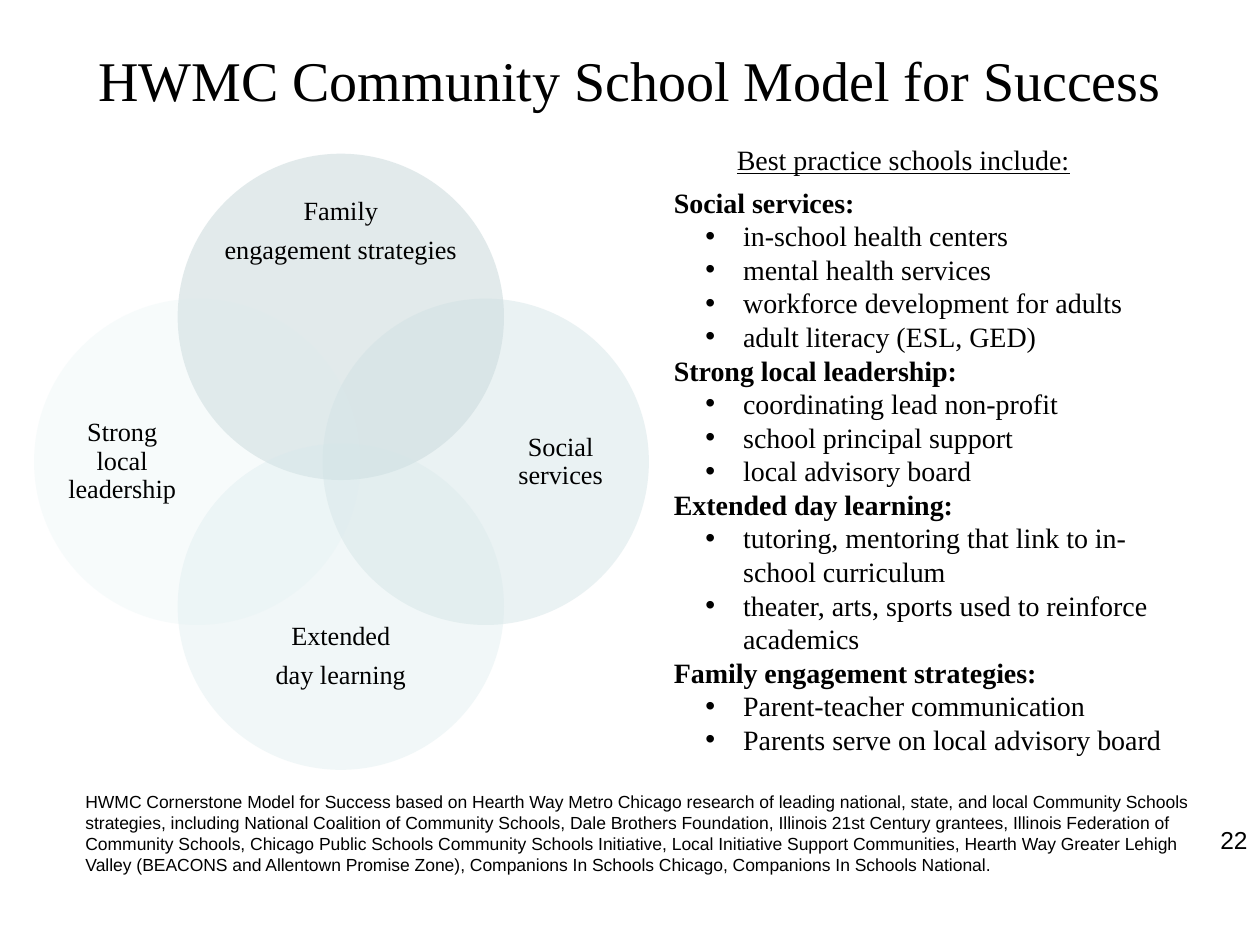
from lxml import etree
from pptx import Presentation
from pptx.dml.color import RGBColor
from pptx.enum.shapes import MSO_SHAPE
from pptx.enum.text import MSO_ANCHOR, PP_ALIGN
from pptx.oxml.ns import qn
from pptx.util import Inches, Pt

OVAL = MSO_SHAPE.OVAL
TOP, MIDDLE = MSO_ANCHOR.TOP, MSO_ANCHOR.MIDDLE
LEFT, CENTER, RIGHT = PP_ALIGN.LEFT, PP_ALIGN.CENTER, PP_ALIGN.RIGHT

COLORS = {
    "text": "000000",
    "family": "C6D7D9",
    "services": "CCDFE1",
    "learning": "D3E7E9",
    "leadership": "DBEDEF",
}
SERIF, SANS = "Times New Roman", "Arial"
DIAMETER = 2.59

# color key, opacity %, circle left and top, label box, label anchor, label lines
CIRCLES = [
    ("family", 50, (1.41, 1.22), (1.71, 1.57, 1.99, 0.82), TOP,
     ["Family", "engagement strategies"]),
    ("services", 40, (2.56, 2.37), (3.95, 2.67, 1, 1.99), MIDDLE,
     ["Social services"]),
    ("learning", 30, (1.41, 3.52), (1.71, 4.94, 1.99, 0.82), TOP,
     ["Extended", "day learning"]),
    ("leadership", 20, (0.27, 2.37), (0.47, 2.67, 1, 1.99), MIDDLE,
     ["Strong local leadership"]),
]

PRACTICES = {
    "Social services:": [
        "in-school health centers",
        "mental health services",
        "workforce development for adults",
        "adult literacy (ESL, GED)",
    ],
    "Strong local leadership:": [
        "coordinating lead non-profit",
        "school principal support",
        "local advisory board",
    ],
    "Extended day learning:": [
        "tutoring, mentoring that link to in-school curriculum",
        "theater, arts, sports used to reinforce academics",
    ],
    "Family engagement strategies:": [
        "Parent-teacher communication",
        "Parents serve on local advisory board",
    ],
}

SOURCES = (
    "HWMC Cornerstone Model for Success based on Hearth Way Metro Chicago "
    "research of leading national, state, and local Community Schools "
    "strategies, including National Coalition of Community Schools, Dale "
    "Brothers Foundation, Illinois 21st Century grantees, Illinois Federation "
    "of Community Schools, Chicago Public Schools Community Schools "
    "Initiative, Local Initiative Support Communities, Hearth Way Greater "
    "Lehigh Valley (BEACONS and Allentown Promise Zone), Companions In Schools "
    "Chicago, Companions In Schools National."
)


class SlideBuilder:
    def __init__(self, slide):
        self.slide = slide

    def style(self, paragraph, size, font=SERIF, bold=False, underline=False):
        for run in paragraph.runs:
            run.font.size = Pt(size)
            run.font.name = font
            run.font.bold = bold
            run.font.underline = underline
            run.font.color.rgb = RGBColor.from_string(COLORS["text"])

    def frame(self, box, anchor=TOP):
        """Add a wrapping text box and return its text frame."""
        shape = self.slide.shapes.add_textbox(*map(Inches, box))
        text_frame = shape.text_frame
        text_frame.word_wrap = True
        text_frame.vertical_anchor = anchor
        return text_frame

    def text(self, box, words, size, align=LEFT, anchor=TOP, **style):
        text_frame = self.frame(box, anchor)
        text_frame.text = words
        paragraph = text_frame.paragraphs[0]
        paragraph.alignment = align
        self.style(paragraph, size, **style)

    def circle(self, color, opacity, corner):
        shape = self.slide.shapes.add_shape(
            OVAL, *map(Inches, (*corner, DIAMETER, DIAMETER)))
        shape.shadow.inherit = False
        shape.line.fill.background()
        shape.fill.solid()
        shape.fill.fore_color.rgb = RGBColor.from_string(COLORS[color])
        color_element = shape.fill._xPr.find(".//" + qn("a:srgbClr"))
        etree.SubElement(color_element, qn("a:alpha"), val=str(opacity * 1000))

    def label(self, box, lines, anchor):
        text_frame = self.frame(box, anchor)
        text_frame.margin_left = text_frame.margin_right = 0
        text_frame.margin_top = text_frame.margin_bottom = 0
        text_frame.text = "\n".join(lines)
        for paragraph in text_frame.paragraphs:
            paragraph.alignment = CENTER
            paragraph.line_spacing = 0.9
            paragraph.space_after = Pt(6)
            self.style(paragraph, 15)

    def bullet(self, paragraph):
        properties = paragraph._p.get_or_add_pPr()
        properties.set("marL", str(Inches(0.55)))
        properties.set("indent", str(-Inches(0.3)))
        etree.SubElement(properties, qn("a:buFont"), typeface=SANS)
        etree.SubElement(properties, qn("a:buChar"), char="•")

    def outline(self, box, sections, size):
        """Write bold headings, each followed by its bulleted items."""
        text_frame = self.frame(box)
        text_frame.text = "\n".join(
            line for heading, items in sections.items()
            for line in (heading, *items))
        for paragraph in text_frame.paragraphs:
            is_heading = paragraph.text in sections
            if not is_heading:
                paragraph.level = 1
                self.bullet(paragraph)
            self.style(paragraph, size, bold=is_heading)


def main():
    deck = Presentation()
    deck.slide_width, deck.slide_height = Inches(10), Inches(7.5)
    builder = SlideBuilder(deck.slides.add_slide(deck.slide_layouts[6]))

    builder.text((7.67, 6.5, 2.33, 0.52), "22", 14, align=RIGHT, font=SANS)
    builder.text((0.5, 0.17, 9, 0.92), "HWMC Community School Model for Success",
                 32, align=CENTER, anchor=MIDDLE)
    for color, opacity, corner, label_box, anchor, lines in CIRCLES:
        builder.circle(color, opacity, corner)
        builder.label(label_box, lines, anchor)
    builder.outline((5.25, 1.42, 4.17, 4.91), PRACTICES, 16)
    builder.text((5.75, 1.08, 3.58, 0.37), "Best practice schools include:",
                 16, underline=True)
    builder.text((0.58, 6.23, 9.17, 0.77), SOURCES, 10, font=SANS)

    deck.save("out.pptx")


if __name__ == "__main__":
    main()
